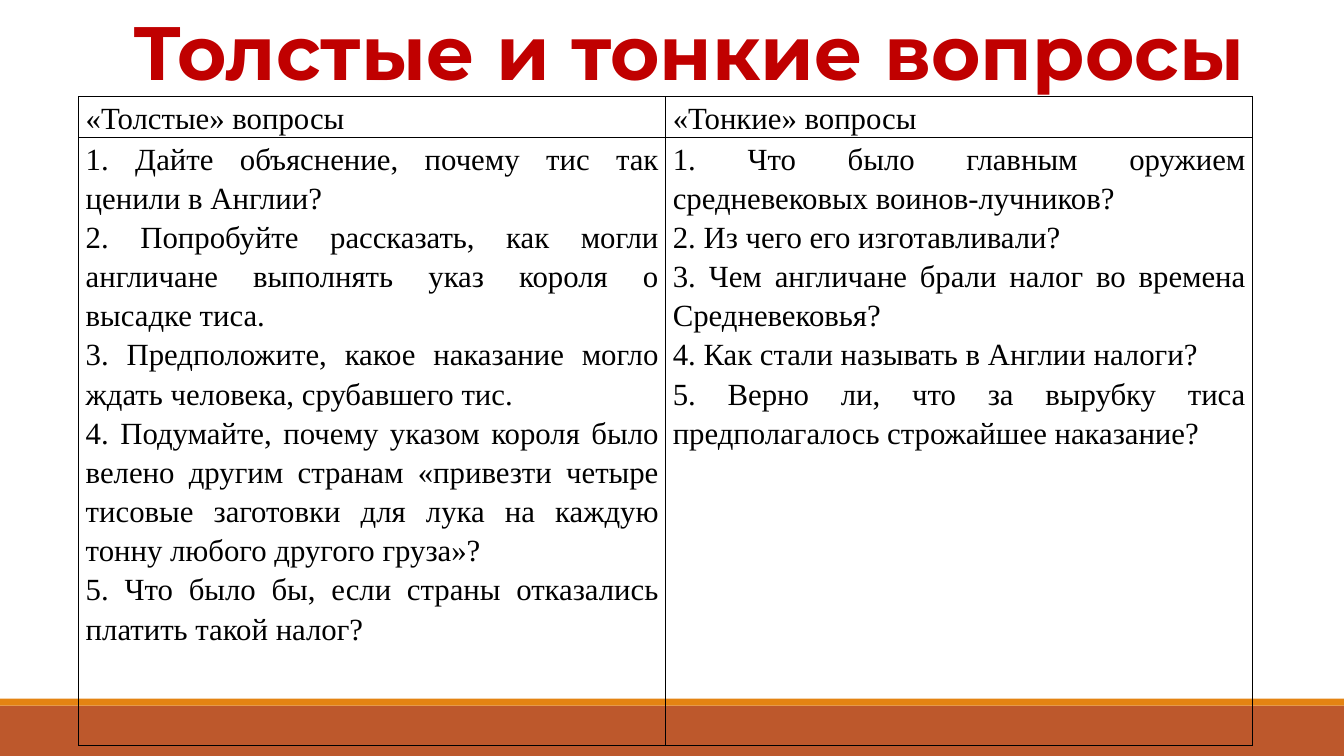
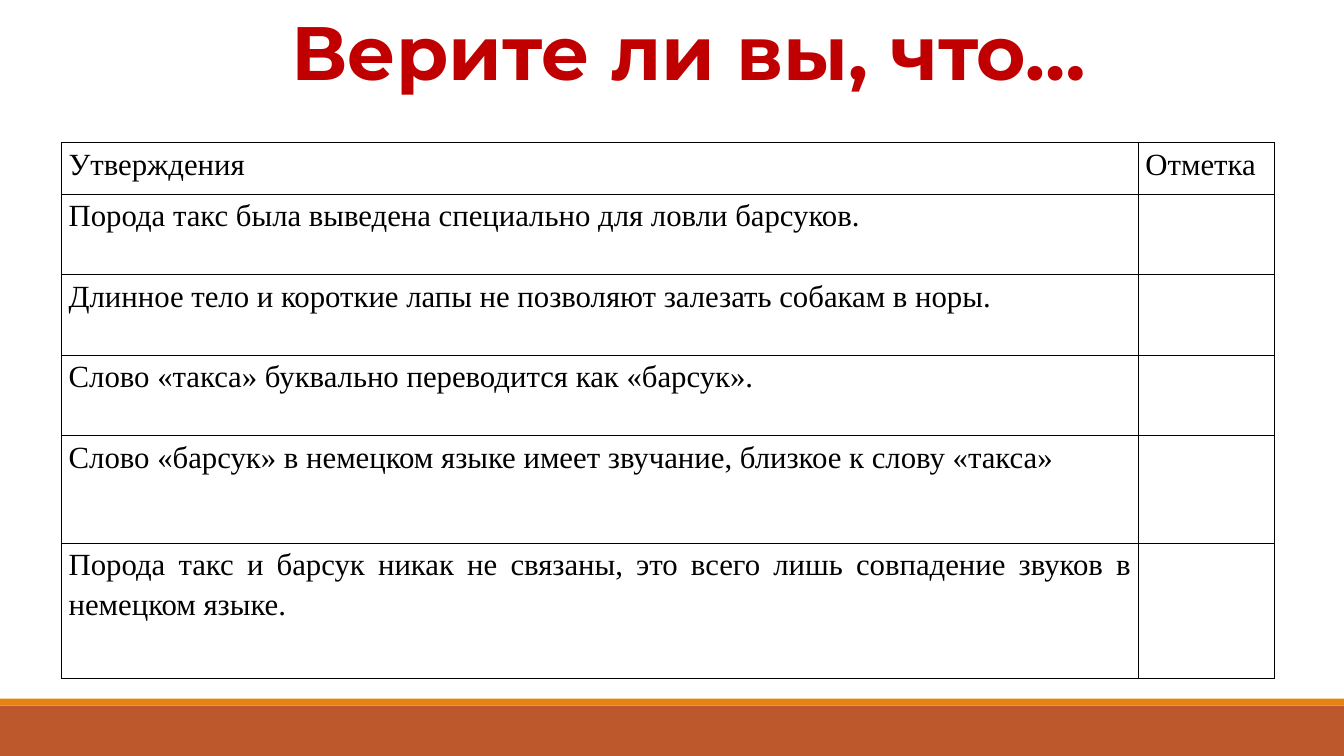
from lxml.etree import SubElement
from pptx import Presentation
from pptx.dml.color import RGBColor
from pptx.enum.shapes import MSO_SHAPE
from pptx.enum.text import MSO_ANCHOR, MSO_AUTO_SIZE, PP_ALIGN
from pptx.oxml.ns import qn
from pptx.util import Inches, Pt

COLORS = {
    "band": "BD582C",
    "stripe": "E48312",
    "title": "C00000",
    "ink": "000000",
}
TITLE_ONLY = 5

QUESTIONS = [
    [["«Толстые» вопросы"], ["«Тонкие» вопросы"]],
    [
        [
            "1. Дайте объяснение, почему тис так ценили в Англии?",
            "2. Попробуйте рассказать, как могли англичане выполнять указ короля о высадке тиса.",
            "3. Предположите, какое наказание могло ждать человека, срубавшего тис.",
            "4. Подумайте, почему указом короля было велено другим странам «привезти четыре "
            "тисовые заготовки для лука на каждую тонну любого другого груза»?",
            "5. Что было бы, если страны отказались платить такой налог?",
        ],
        [
            "1. Что было главным оружием средневековых воинов-лучников?",
            "2. Из чего его изготавливали?",
            "3. Чем англичане брали налог во времена Средневековья?",
            "4. Как стали называть в Англии налоги?",
            "5. Верно ли, что за вырубку тиса предполагалось строжайшее наказание?",
        ],
    ],
]

STATEMENTS = [
    "Порода такс была выведена специально для ловли барсуков.",
    "Длинное тело и короткие лапы не позволяют залезать собакам в норы.",
    "Слово «такса» буквально переводится как «барсук».",
    "Слово «барсук» в немецком языке имеет звучание, близкое к слову «такса»",
    "Порода такс и барсук никак не связаны, это всего лишь совпадение звуков в немецком языке.",
]


class Deck:
    def __init__(self):
        self.prs = Presentation()
        self.prs.slide_width = Inches(13.33)
        self.prs.slide_height = Inches(7.5)
        self.slide = None

    def across(self, percent):
        return round(self.prs.slide_width * percent / 100)

    def down(self, percent):
        return round(self.prs.slide_height * percent / 100)

    def add_slide(self, heading):
        first = self.slide is None
        self.slide = self.prs.slides.add_slide(self.prs.slide_layouts[TITLE_ONLY])
        if first:
            self.master_band(93.33, 6.67, "band")
            self.master_band(92.4, 0.93, "stripe")
        self.title(heading)

    def master_band(self, top, height, color):
        band = self.slide.shapes.add_shape(
            MSO_SHAPE.RECTANGLE, 0, self.down(top), self.across(100), self.down(height))
        band.shadow.inherit = False
        band.fill.solid()
        band.fill.fore_color.rgb = RGBColor.from_string(COLORS[color])
        band.line.fill.background()
        self.prs.slide_master.shapes.element.append(band.element)

    def title(self, heading):
        title = self.slide.shapes.title
        title.left, title.top = self.across(7), 0
        title.width, title.height = self.across(88.5), self.down(13.5)
        frame = title.text_frame
        frame.word_wrap = True
        frame.auto_size = MSO_AUTO_SIZE.NONE
        frame.vertical_anchor = MSO_ANCHOR.TOP
        paragraph = frame.paragraphs[0]
        paragraph.alignment = PP_ALIGN.CENTER
        self.run(paragraph, heading, "Montserrat", 54, "title", bold=True)

    def run(self, paragraph, text, font, size, color, bold=False):
        run = paragraph.add_run()
        run.text = text
        run.font.name = font
        run.font.size = Pt(size)
        run.font.bold = bold
        run.font.color.rgb = RGBColor.from_string(COLORS[color])

    def table(self, left, top, columns, rows, content):
        table = self.slide.shapes.add_table(
            len(rows), len(columns), self.across(left), self.down(top),
            self.across(sum(columns)), self.down(sum(rows))).table
        table.first_row = table.horz_banding = False
        for column, width in zip(table.columns, columns):
            column.width = self.across(width)
        for row, height, entries in zip(table.rows, rows, content):
            row.height = self.down(height)
            for cell, lines in zip(row.cells, entries):
                self.cell(cell, lines)

    def cell(self, cell, lines):
        cell.margin_left = cell.margin_right = self.across(0.53)
        cell.margin_top = cell.margin_bottom = 0
        self.borders(cell)
        cell.fill.background()
        frame = cell.text_frame
        for index, line in enumerate(lines):
            paragraph = frame.add_paragraph() if index else frame.paragraphs[0]
            paragraph.alignment = PP_ALIGN.JUSTIFY
            paragraph.line_spacing = 1.15
            self.run(paragraph, line, "Times New Roman", 22, "ink")

    def borders(self, cell):
        properties = cell._tc.get_or_add_tcPr()
        for side in ("a:lnL", "a:lnR", "a:lnT", "a:lnB"):
            border = SubElement(properties, qn(side), w=str(Pt(1)))
            fill = SubElement(border, qn("a:solidFill"))
            SubElement(fill, qn("a:srgbClr"), val=COLORS["ink"])


def main():
    deck = Deck()

    deck.add_slide("Толстые и тонкие вопросы")
    deck.table(5.85, 12.8, [43.68] * 2, [5.4, 80.4], QUESTIONS)

    deck.add_slide("Верите ли вы, что…")
    checklist = [[["Утверждения"], ["Отметка"]]]
    checklist += [[[statement], []] for statement in STATEMENTS]
    deck.table(4.58, 18.9, [80.12, 10.12], [6.8] + [10.65] * 3 + [14.25, 17.9], checklist)

    deck.prs.save("out.pptx")


if __name__ == "__main__":
    main()
